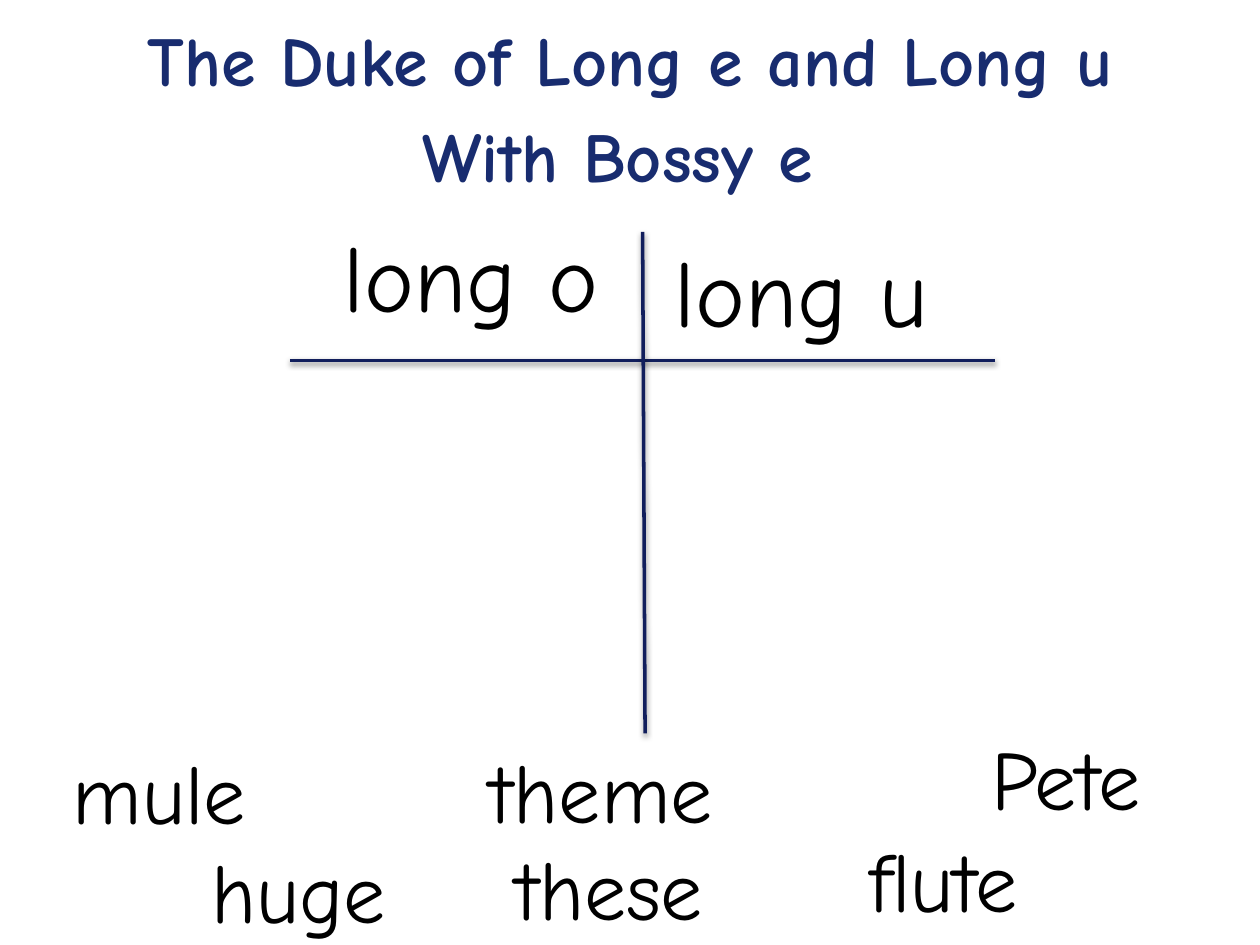
from lxml import etree
from pptx import Presentation
from pptx.dml.color import RGBColor
from pptx.enum.shapes import MSO_CONNECTOR
from pptx.enum.text import MSO_ANCHOR, MSO_AUTO_SIZE, PP_ALIGN
from pptx.oxml.ns import qn
from pptx.util import Inches, Pt

LEFT, CENTER = PP_ALIGN.LEFT, PP_ALIGN.CENTER
MIDDLE = MSO_ANCHOR.MIDDLE
NO_FIT, GROW = MSO_AUTO_SIZE.NONE, MSO_AUTO_SIZE.SHAPE_TO_FIT_TEXT
STRAIGHT = MSO_CONNECTOR.STRAIGHT

FONT = "Comic Neue"
NAVY, INK, BLACK = "182C6F", "111E5C", "000000"

# Each entry: text, left, top, width
HEADS = [("long o", 2.36, 1.68, 2.76), ("long u", 5, 1.8, 2.72)]
WORDS = [
    ("theme", 3.79, 5.82, 3.02),
    ("mule", 0.48, 5.83, 2.2),
    ("Pete", 7.77, 5.72, 2.2),
    ("huge", 1.58, 6.61, 2.2),
    ("these", 3.99, 6.59, 2.2),
    ("flute", 6.8, 6.53, 2.2),
]


def color(code):
    return RGBColor.from_string(code)


def write(frame, text, size=48, tint=BLACK, bold=False, align=LEFT, fit=GROW):
    frame.word_wrap = True
    frame.auto_size = fit
    para = frame.paragraphs[0]
    para.alignment = align
    run = para.add_run()
    run.text = text
    font = run.font
    font.name, font.size, font.bold = FONT, Pt(size), bold
    font.color.rgb = color(tint)
    return para


def add_title(slide, text):
    title = slide.shapes.title
    title.left, title.top = Inches(0.5), Inches(0.17)
    title.width, title.height = Inches(9), Inches(1.25)
    frame = title.text_frame
    frame.vertical_anchor = MIDDLE
    para = write(frame, text, size=40, tint=NAVY, bold=True,
                 align=CENTER, fit=NO_FIT)
    para.line_spacing = 1.15
    para.space_after = Pt(10)


def add_label(slide, text, left, top, width, height, **style):
    box = slide.shapes.add_textbox(
        Inches(left), Inches(top), Inches(width), Inches(height))
    write(box.text_frame, text, **style)


def add_shade(line):
    """Give a line a soft shadow that falls straight down."""
    effects = etree.SubElement(line._element.spPr, qn("a:effectLst"))
    shade = etree.SubElement(
        effects, qn("a:outerShdw"), blurRad=str(Pt(3.1)), dist=str(Pt(1.6)),
        dir="5400000", rotWithShape="0")
    tint = etree.SubElement(shade, qn("a:srgbClr"), val=BLACK)
    etree.SubElement(tint, qn("a:alpha"), val="38000")


def add_rule(slide, *ends):
    line = slide.shapes.add_connector(STRAIGHT, *map(Inches, ends))
    line.line.color.rgb = color(INK)
    line.line.width = Pt(2)
    add_shade(line)


def main():
    deck = Presentation()
    deck.slide_width, deck.slide_height = Inches(10), Inches(7.5)
    slide = deck.slides.add_slide(deck.slide_layouts[5])

    add_title(slide, "The Duke of Long e and Long u With Bossy e ")

    # Sorting chart: two crossed rules
    add_rule(slide, 2.3, 2.86, 7.9, 2.86)
    add_rule(slide, 5.1, 1.84, 5.12, 5.82)

    # Column heads
    for head in HEADS:
        add_label(slide, *head, 1.01, size=54, align=CENTER)

    # Words to sort
    for word in WORDS:
        add_label(slide, *word, 0.91)

    deck.save("out.pptx")


if __name__ == "__main__":
    main()
